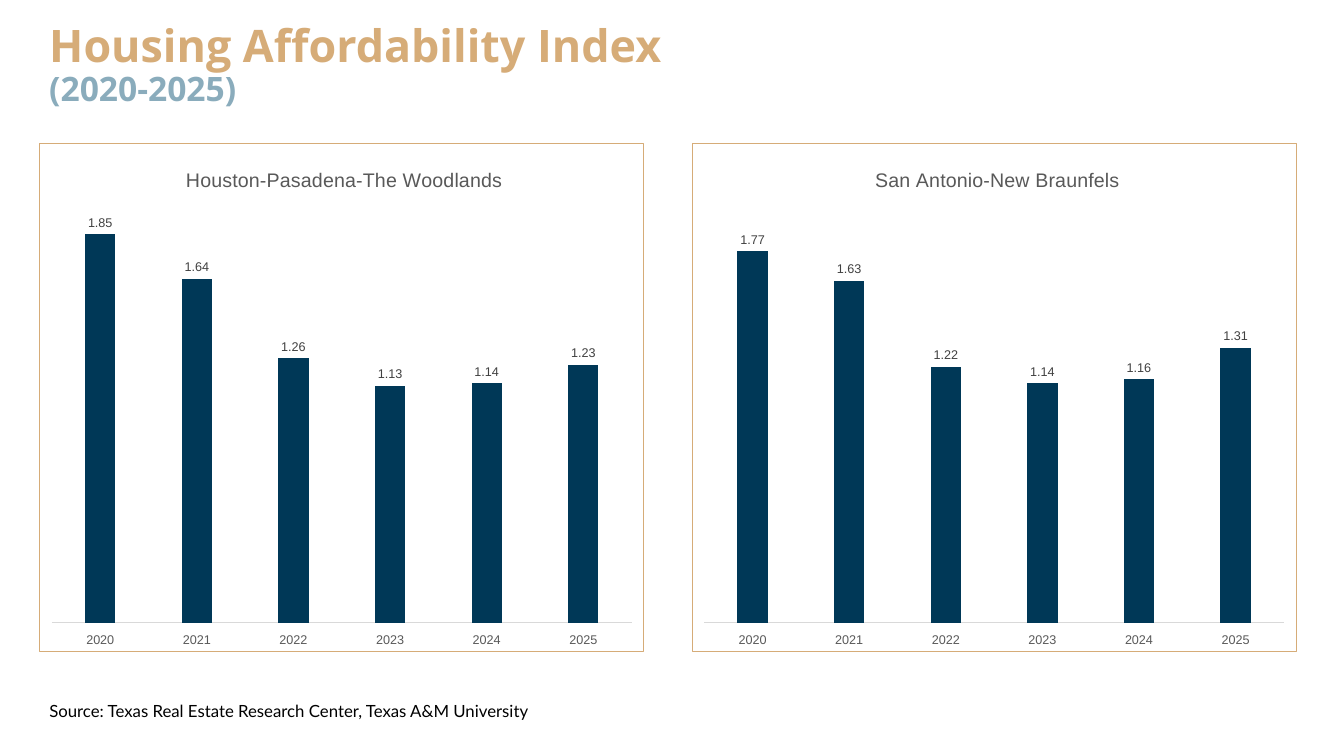
from lxml import etree
from pptx import Presentation
from pptx.chart.data import CategoryChartData
from pptx.dml.color import RGBColor
from pptx.enum.chart import XL_CHART_TYPE, XL_LABEL_POSITION, XL_TICK_LABEL_POSITION, XL_TICK_MARK
from pptx.enum.text import MSO_ANCHOR
from pptx.oxml import parse_xml
from pptx.oxml.ns import nsdecls, qn
from pptx.util import Pt

COLUMNS = XL_CHART_TYPE.COLUMN_CLUSTERED
OUTSIDE_END = XL_LABEL_POSITION.OUTSIDE_END
LABELS_LOW = XL_TICK_LABEL_POSITION.LOW
NO_TICKS = XL_TICK_MARK.NONE
TOP = MSO_ANCHOR.TOP
MIDDLE = MSO_ANCHOR.MIDDLE

EMU_PER_PX = 9144
COLORS = {
    "gold": "D6AC78",
    "sky": "8AACBC",
    "navy": "003857",
    "black": "000000",
    "label": "404040",
    "caption": "595959",
    "axis": "D9D9D9",
}
YEARS = ["2020", "2021", "2022", "2023", "2024", "2025"]
METROS = [
    ("Houston-Pasadena-The Woodlands", 0.236, [1.85, 1.64, 1.26, 1.13, 1.14, 1.23]),
    ("San Antonio-New Braunfels", 0.297, [1.77, 1.63, 1.22, 1.14, 1.16, 1.31]),
]
PANEL_LEFT, PANEL_TOP, PANEL_WIDTH, PANEL_HEIGHT, PANEL_STEP = 39, 142, 600, 505, 647


def px(length):
    return length * EMU_PER_PX


def color(name):
    return RGBColor.from_string(COLORS[name])


def style_font(font, face, size, color_name, bold=False):
    font.name = face
    font.size = Pt(size)
    font.bold = bold
    font.color.rgb = color(color_name)


def add_text(slide, box, lines, face, bold=False, anchor=TOP, inset=0, spacing=None):
    frame = slide.shapes.add_textbox(*map(px, box)).text_frame
    frame.word_wrap = True
    frame.vertical_anchor = anchor
    frame.margin_left = frame.margin_right = px(10)
    frame.margin_top = frame.margin_bottom = px(inset)
    for index, (words, size, color_name) in enumerate(lines):
        paragraph = frame.add_paragraph() if index else frame.paragraphs[0]
        paragraph.line_spacing = spacing
        run = paragraph.add_run()
        run.text = words
        style_font(run.font, face, size, color_name, bold)


def manual_layout(target=None, **fractions):
    layout = parse_xml(f"<c:layout {nsdecls('c')}><c:manualLayout/></c:layout>")
    manual = layout[0]
    if target:
        etree.SubElement(manual, qn("c:layoutTarget")).set("val", target)
    for side in ("xMode", "yMode"):
        etree.SubElement(manual, qn(f"c:{side}")).set("val", "edge")
    for side, fraction in fractions.items():
        etree.SubElement(manual, qn(f"c:{side}")).set("val", str(fraction))
    return layout


def replace_layout(parent, layout, position):
    for current in parent.findall(qn("c:layout")):
        parent.remove(current)
    parent.insert(position, layout)


def add_border(chart):
    border = parse_xml(
        f'<c:spPr {nsdecls("c", "a")}><a:noFill/><a:ln w="{Pt(0.75)}"><a:solidFill>'
        f'<a:srgbClr val="{COLORS["gold"]}"/></a:solidFill></a:ln></c:spPr>'
    )
    chart.element.find(qn("c:chart")).addnext(border)


def add_index_chart(slide, left, metro, title_left, values):
    data = CategoryChartData(number_format="0.00")
    data.categories = YEARS
    data.add_series("Series 1", values)
    box = (left, PANEL_TOP, PANEL_WIDTH, PANEL_HEIGHT)
    chart = slide.shapes.add_chart(COLUMNS, *map(px, box), data).chart
    style_font(chart.font, "Arial", 10, "black")
    chart.has_legend = False
    add_border(chart)

    heading = chart.chart_title.text_frame.paragraphs[0].add_run()
    heading.text = metro
    style_font(heading.font, "Arial", 14, "caption")
    chart.chart_title.include_in_layout = False
    replace_layout(chart.chart_title._element, manual_layout(x=title_left, y=0.04), 1)
    plot_area = chart.element.find(f".//{qn('c:plotArea')}")
    replace_layout(plot_area, manual_layout("inner", x=0.02, y=0.117, w=0.96, h=0.826), 0)

    years = chart.category_axis
    years.major_tick_mark = NO_TICKS
    years.tick_label_position = LABELS_LOW
    style_font(years.tick_labels.font, "Arial", 9, "caption")
    years.format.line.color.rgb = color("axis")
    years.format.line.width = Pt(0.75)
    scale = chart.value_axis
    scale.minimum_scale = 0
    scale.maximum_scale = 2
    scale.has_major_gridlines = False
    scale.visible = False

    plot = chart.plots[0]
    plot.gap_width = 219
    plot.overlap = -27
    plot.vary_by_categories = False
    bars = plot.series[0]
    bars.format.fill.solid()
    bars.format.fill.fore_color.rgb = color("navy")
    labels = bars.data_labels
    labels.show_value = True
    labels.position = OUTSIDE_END
    labels.number_format = "0.00"
    labels.number_format_is_linked = False
    style_font(labels.font, "Arial", 9, "label")


def main():
    deck = Presentation()
    deck.slide_width = px(1333)
    deck.slide_height = px(750)
    slide = deck.slides.add_slide(deck.slide_layouts[6])
    for column, metro in enumerate(METROS):
        add_index_chart(slide, PANEL_LEFT + column * PANEL_STEP, *metro)
    headline = [("Housing Affordability Index", 32, "gold"), ("(2020-2025)", 24, "sky")]
    add_text(slide, (39, 24, 1214, 115), headline, "Open Sans", bold=True, spacing=0.9)
    source = [("Source: Texas Real Estate Research Center, Texas A&M University", 12, "black")]
    add_text(slide, (39, 687, 518, 39), source, "Lato", anchor=MIDDLE, inset=5, spacing=0.9)
    deck.save("out.pptx")


if __name__ == "__main__":
    main()
